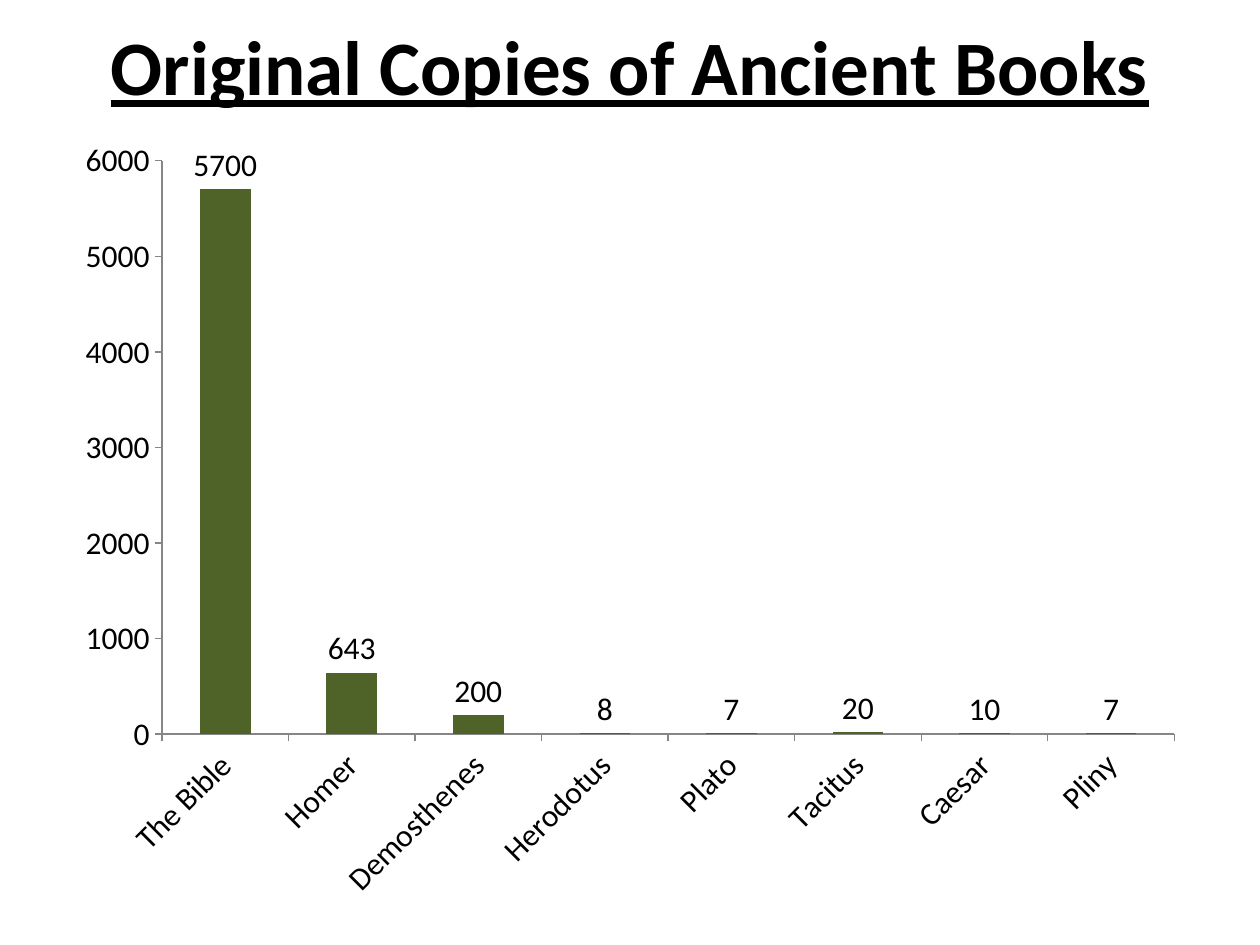
from pptx import Presentation
from pptx.chart.data import CategoryChartData
from pptx.dml.color import RGBColor
from pptx.enum.chart import XL_CHART_TYPE, XL_LABEL_POSITION, XL_TICK_MARK
from pptx.enum.text import MSO_ANCHOR, MSO_AUTO_SIZE, PP_ALIGN
from pptx.util import Emu, Pt

SCALE = 914400 / 126
COLORS = {"text": "000000", "bar": "4F6228", "axis": "868686"}
TITLE = {"size": Pt(44), "name": "Calibri", "bold": True, "underline": True}
LABEL = {"size": Pt(18), "name": "Calibri", "bold": False}
BOOKS = {
    "The Bible": 5700,
    "Homer": 643,
    "Demosthenes": 200,
    "Herodotus": 8,
    "Plato": 7,
    "Tacitus": 20,
    "Caesar": 10,
    "Pliny": 7,
}


def px(n):
    return Emu(round(n * SCALE))


def tint(name):
    return RGBColor.from_string(COLORS[name])


def style(font, form):
    for key, value in form.items():
        setattr(font, key, value)
    font.color.rgb = tint("text")


def add_title(slide, box):
    title = slide.shapes.title
    title.left, title.top, title.width, title.height = map(px, box)
    frame = title.text_frame
    frame.text = "Original Copies of Ancient Books"
    frame.auto_size = MSO_AUTO_SIZE.NONE
    frame.vertical_anchor = MSO_ANCHOR.MIDDLE
    para = frame.paragraphs[0]
    para.alignment = PP_ALIGN.CENTER
    style(para.runs[0].font, TITLE)


def add_bars(slide, box):
    data = CategoryChartData()
    data.categories = list(BOOKS)
    data.add_series("Series 1", list(BOOKS.values()))
    chart = slide.shapes.add_chart(
        XL_CHART_TYPE.COLUMN_CLUSTERED, *map(px, box), data
    ).chart
    chart.has_legend = False
    chart.has_title = False
    style(chart.font, LABEL)

    for axis in (chart.category_axis, chart.value_axis):
        axis.has_major_gridlines = False
        axis.major_tick_mark = XL_TICK_MARK.OUTSIDE
        axis.minor_tick_mark = XL_TICK_MARK.NONE
        axis.format.line.color.rgb = tint("axis")
        axis.format.line.width = Pt(0.75)
        style(axis.tick_labels.font, LABEL)
    value = chart.value_axis
    value.minimum_scale, value.maximum_scale, value.major_unit = 0, 6000, 1000
    chart.category_axis._element.txPr.bodyPr.set("rot", "-2700000")

    plot = chart.plots[0]
    plot.gap_width = 150
    plot.vary_by_categories = False
    fill = plot.series[0].format.fill
    fill.solid()
    fill.fore_color.rgb = tint("bar")
    labels = plot.series[0].data_labels
    labels.show_value = True
    labels.position = XL_LABEL_POSITION.OUTSIDE_END
    style(labels.font, LABEL)


def main():
    deck = Presentation()
    deck.slide_width, deck.slide_height = px(1260), px(945)
    slide = deck.slides.add_slide(deck.slide_layouts[5])
    add_title(slide, (63, 10, 1134, 110))
    add_bars(slide, (63, 126, 1134, 788))
    deck.save("out.pptx")


if __name__ == "__main__":
    main()
